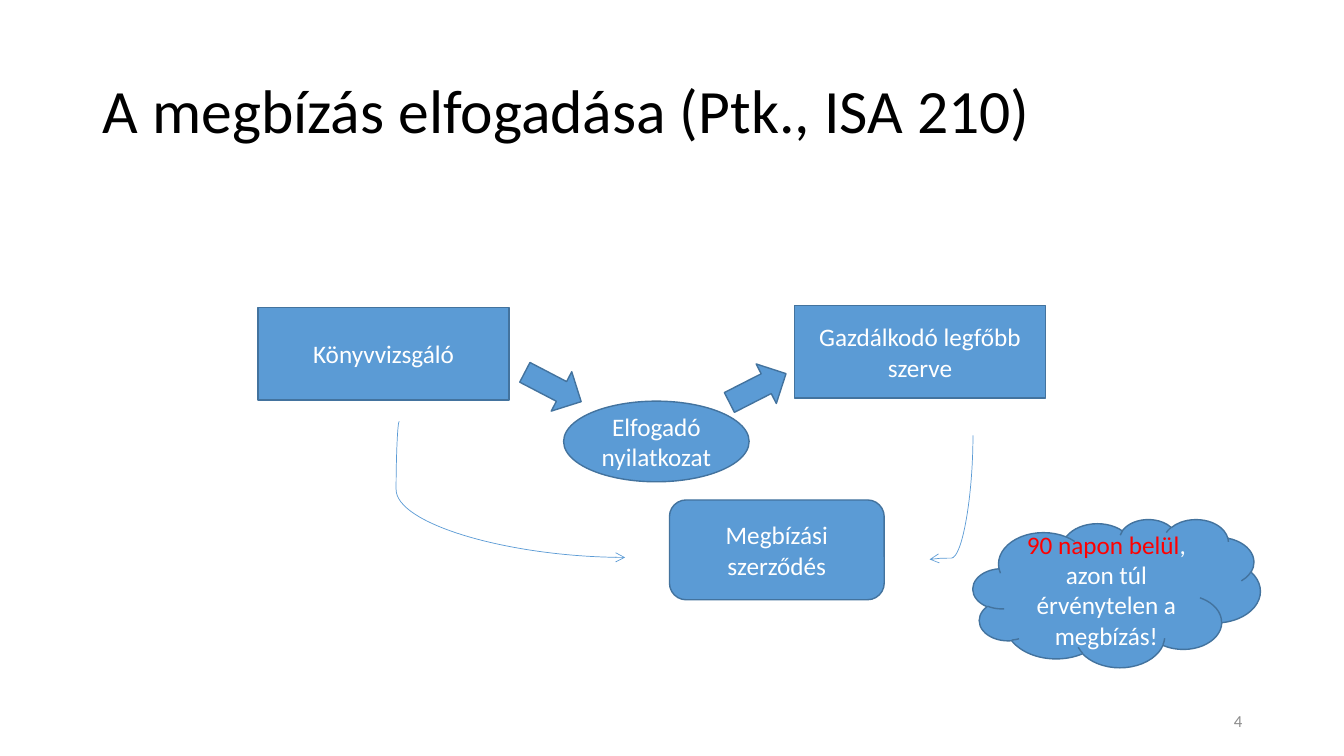
import pptx
import pptx.util
import pptx.dml.color
import pptx.enum.shapes
import pptx.enum.text
import pptx.oxml.ns
import pptx.oxml.xmlchemy

Inches = pptx.util.Inches
Pt = pptx.util.Pt
RGBColor = pptx.dml.color.RGBColor
MSO_SHAPE = pptx.enum.shapes.MSO_SHAPE
PP_ALIGN = pptx.enum.text.PP_ALIGN
qn = pptx.oxml.ns.qn
OxmlElement = pptx.oxml.xmlchemy.OxmlElement

BLUE = RGBColor(0x5B, 0x9B, 0xD5)
EDGE = RGBColor(0x43, 0x73, 0x9E)
WHITE = RGBColor(0xFF, 0xFF, 0xFF)
BLACK = RGBColor(0x00, 0x00, 0x00)
RED = RGBColor(0xFF, 0x00, 0x00)
GREY = RGBColor(0x8C, 0x8C, 0x8C)


def add_text(sp, text, size=18, color=WHITE, align=PP_ALIGN.CENTER, spacing=None):
    """Append a formatted run to the first paragraph of a shape."""
    tf = sp.text_frame
    tf.word_wrap = True
    tf.auto_size = pptx.enum.text.MSO_AUTO_SIZE.NONE
    tf.vertical_anchor = pptx.enum.text.MSO_ANCHOR.MIDDLE
    p = tf.paragraphs[0]
    p.alignment = align
    if spacing:
        p.line_spacing = spacing
    r = p.add_run()
    r.text = text
    r.font.name = "Calibri"
    r.font.size = Pt(size)
    r.font.color.rgb = color


prs = pptx.Presentation()
prs.slide_width = Inches(13.33)
prs.slide_height = Inches(7.5)
s = prs.slides.add_slide(prs.slide_layouts[5])

# Title
title = s.shapes.title
title.left, title.top = Inches(0.92), Inches(0.4)
title.width, title.height = Inches(11.5), Inches(1.45)
add_text(title, "A megbízás elfogadása (Ptk., ISA 210)", size=44, color=BLACK,
         align=PP_ALIGN.LEFT, spacing=0.9)

# Slide number
number = s.shapes.add_textbox(Inches(9.42), Inches(6.95), Inches(3), Inches(0.4))
add_text(number, "4", size=12, color=GREY, align=PP_ALIGN.RIGHT)

# Parties, documents, block arrows and deadline: kind, box, rotation, runs
nodes = [
    (MSO_SHAPE.RECTANGLE, (2.56, 3.05, 2.49, 0.92), 0, [("Könyvvizsgáló", WHITE)]),
    (MSO_SHAPE.RECTANGLE, (7.88, 3.03, 2.49, 0.92), 0,
     [("Gazdálkodó legfőbb szerve", WHITE)]),
    (MSO_SHAPE.OVAL, (5.59, 3.98, 1.84, 0.8), 0, [("Elfogadó nyilatkozat", WHITE)]),
    (MSO_SHAPE.RIGHT_ARROW, (5.17, 3.62, 0.63, 0.44), 27.5, []),
    (MSO_SHAPE.RIGHT_ARROW, (7.2, 3.63, 0.63, 0.44), 333, []),
    (MSO_SHAPE.ROUNDED_RECTANGLE, (6.64, 4.96, 2.13, 0.99), 0,
     [("Megbízási szerződés", WHITE)]),
    (MSO_SHAPE.CLOUD, (9.65, 5.15, 2.85, 1.47), 0,
     [("90 napon belül", RED), (", azon túl érvénytelen a megbízás!", WHITE)]),
]
for kind, box, rotation, runs in nodes:
    sp = s.shapes.add_shape(kind, *[Inches(v) for v in box])
    sp.shadow.inherit = False
    sp.rotation = rotation
    sp.fill.solid()
    sp.fill.fore_color.rgb = BLUE
    sp.line.color.rgb = EDGE
    sp.line.width = Pt(1)
    for text, color in runs:
        add_text(sp, text, color=color)

# Curved arrows to the contract: ends before rotation, degrees, bend in 1/100000
curves = [
    ((3.96, 4.18, 6.2, 5.53), 0, -1400),
    ((8.82, 4.72, 10.05, 5.15), 90, 99000),
]
for ends, rotation, bend in curves:
    cn = s.shapes.add_connector(pptx.enum.shapes.MSO_CONNECTOR.CURVE,
                                *[Inches(v) for v in ends])
    cn.line.color.rgb = BLUE
    cn.line.width = Pt(0.5)
    spPr = cn._element.spPr
    spPr.find(qn("a:xfrm")).set("rot", str(rotation * 60000))
    guides = spPr.find(qn("a:prstGeom")).get_or_add_avLst()
    guide = OxmlElement("a:gd")
    guide.set("name", "adj1")
    guide.set("fmla", f"val {bend}")
    guides.append(guide)
    head = OxmlElement("a:tailEnd")
    head.set("type", "arrow")
    spPr.find(qn("a:ln")).append(head)
    spPr.append(OxmlElement("a:effectLst"))

prs.save("out.pptx")
